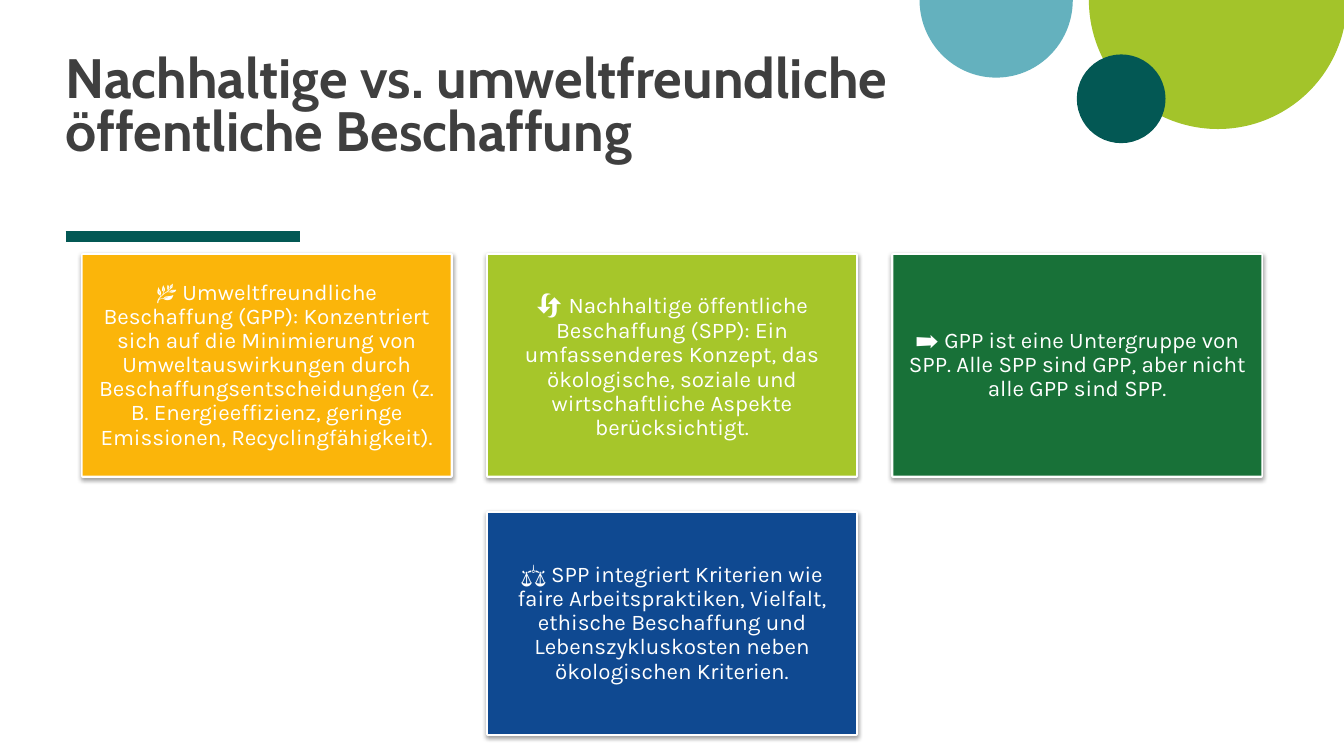
from lxml.etree import SubElement
from pptx import Presentation
from pptx.dml.color import RGBColor
from pptx.enum.shapes import MSO_CONNECTOR as Connector, MSO_SHAPE as Shape
from pptx.enum.text import MSO_ANCHOR as Anchor, PP_ALIGN as Align
from pptx.oxml.ns import qn
from pptx.util import Emu, Pt

SCALE = 9144  # EMU per px, 100 px to the inch
COLORS = {
    "white": "FFFFFF", "title": "3F3F3F", "petrol": "035854",
    "lime": "A3C42A", "sky": "64B1BE", "shadow": "000000",
    "amber": "FBB50A", "leaf": "A6C62A", "forest": "187138", "navy": "0F4991",
}
CARDS_PER_ROW = 3
# Each card: fill, then runs of (text, size)
CARDS = [
    ("amber", [("🌿 Umweltfreundliche Beschaffung (GPP): Konzentriert sich auf die "
                "Minimierung von Umweltauswirkungen durch Beschaffungsentscheidungen "
                "(z. B. Energieeffizienz, geringe Emissionen, Recyclingfähigkeit).", 16)]),
    ("leaf", [("🔄 ", 19),
              ("Nachhaltige öffentliche Beschaffung (SPP): Ein umfassenderes Konzept, "
               "das ökologische, soziale und wirtschaftliche Aspekte berücksichtigt.", 16)]),
    ("forest", [("➡️ GPP ist eine Untergruppe von SPP. Alle SPP sind GPP, "
                 "aber nicht alle GPP sind SPP.", 16)]),
    ("navy", [("⚖️ SPP integriert Kriterien wie faire Arbeitspraktiken, Vielfalt, "
               "ethische Beschaffung und Lebenszykluskosten neben ökologischen "
               "Kriterien.", 16)]),
]


def px(length):
    return Emu(round(length * SCALE))


def color(name):
    return RGBColor.from_string(COLORS[name])


def add_filled(slide, kind, box, fill):
    shape = slide.shapes.add_shape(kind, *map(px, box))
    shape.shadow.inherit = False
    shape.fill.solid()
    shape.fill.fore_color.rgb = color(fill)
    shape.line.fill.background()
    return shape


def add_run(paragraph, text, font_name, size, font_color, bold=False):
    run = paragraph.add_run()
    run.text = text
    run.font.name = font_name
    run.font.size = Pt(size)
    run.font.bold = bold
    run.font.color.rgb = color(font_color)


def set_frame(frame, inset):
    frame.word_wrap = True
    frame.vertical_anchor = Anchor.MIDDLE
    frame.margin_left = frame.margin_right = px(inset)
    frame.margin_top = frame.margin_bottom = px(inset)


def add_soft_shadow(shape):
    effects = shape._element.spPr.find(qn("a:effectLst"))
    shadow = SubElement(effects, qn("a:outerShdw"), blurRad=str(Pt(3.1)),
                        dist=str(Pt(1.6)), dir="5400000", rotWithShape="0")
    tint = SubElement(shadow, qn("a:srgbClr"), val=COLORS["shadow"])
    SubElement(tint, qn("a:alpha"), val="37000")


def draw_circles(slide, left, top):
    # Two half discs hang from the top edge, a small disc overlaps them
    for box, fill, end in (((left + 168, top - 128, 256, 256), "lime", 107.96),
                           ((left, top - 77, 152, 154), "sky", 108.52)):
        half_disc = add_filled(slide, Shape.PIE, box, fill)
        half_disc.adjustments[0] = 0
        half_disc.adjustments[1] = end
    add_filled(slide, Shape.OVAL, (left + 156, top + 54, 88, 88), "petrol")


def draw_title(slide, left, top, width, height):
    title = slide.shapes.title
    title.left, title.top, title.width, title.height = map(px, (left, top, width, height))
    set_frame(title.text_frame, 0)
    paragraph = title.text_frame.paragraphs[0]
    paragraph.alignment = Align.LEFT
    paragraph.line_spacing = 0.8
    add_run(paragraph, "Nachhaltige vs. umweltfreundliche öffentliche Beschaffung",
            "Cabin", 39.6, "title", bold=True)
    # Rule below the title
    rule_top = px(top + height + 41)
    rule = slide.shapes.add_connector(Connector.STRAIGHT, px(left), rule_top,
                                      px(left + 233), rule_top)
    rule.line.color.rgb = color("petrol")
    rule.line.width = Pt(8)
    SubElement(rule._element.spPr, qn("a:effectLst"))


def draw_card(slide, box, fill, runs):
    # White-edged frame with shadow, then the text panel on it
    frame = add_filled(slide, Shape.RECTANGLE, box, fill)
    frame.line.color.rgb = color("white")
    frame.line.width = Pt(3)
    add_soft_shadow(frame)
    panel = add_filled(slide, Shape.RECTANGLE, box, fill)
    set_frame(panel.text_frame, 8)
    paragraph = panel.text_frame.paragraphs[0]
    paragraph.alignment = Align.CENTER
    paragraph.line_spacing = 0.9
    for text, size in runs:
        add_run(paragraph, text, "Karla", size, "white")


def draw_cards(slide, left, top, width):
    card_width, card_height, gap = 365, 219, 37
    for start in range(0, len(CARDS), CARDS_PER_ROW):
        row = CARDS[start:start + CARDS_PER_ROW]
        row_width = len(row) * (card_width + gap) - gap
        row_left = left + (width - row_width) / 2
        row_top = top + start // CARDS_PER_ROW * (card_height + gap)
        for column, (fill, runs) in enumerate(row):
            card_left = row_left + column * (card_width + gap)
            draw_card(slide, (card_left, row_top, card_width, card_height), fill, runs)


def main():
    presentation = Presentation()
    presentation.slide_width, presentation.slide_height = px(1333), px(750)
    slide = presentation.slides.add_slide(presentation.slide_layouts[5])
    slide.background.fill.solid()
    slide.background.fill.fore_color.rgb = color("white")
    draw_circles(slide, 912, 0)
    draw_title(slide, 65, 22, 928, 172)
    draw_cards(slide, 82, 253, 1169)
    presentation.save("out.pptx")


if __name__ == "__main__":
    main()
